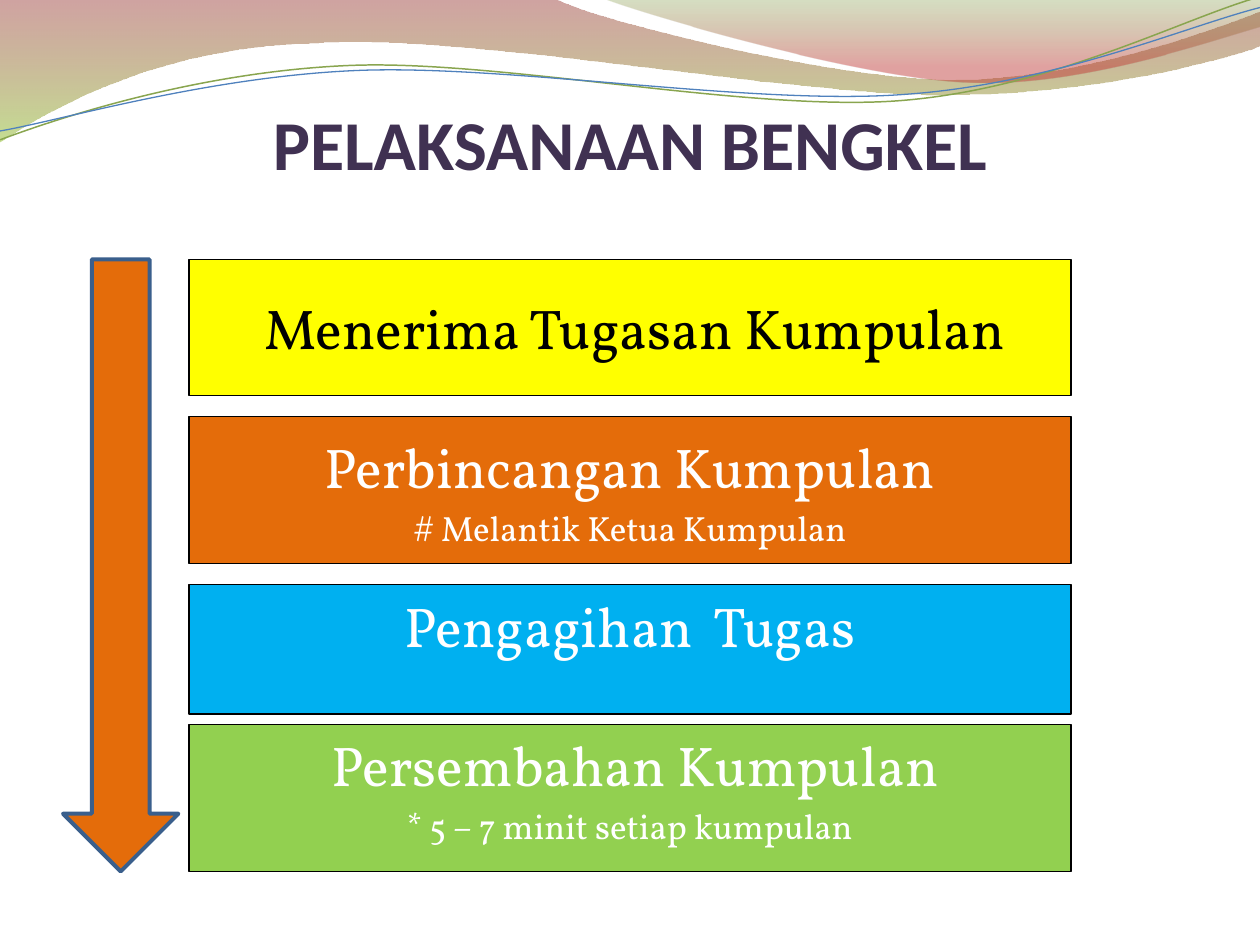
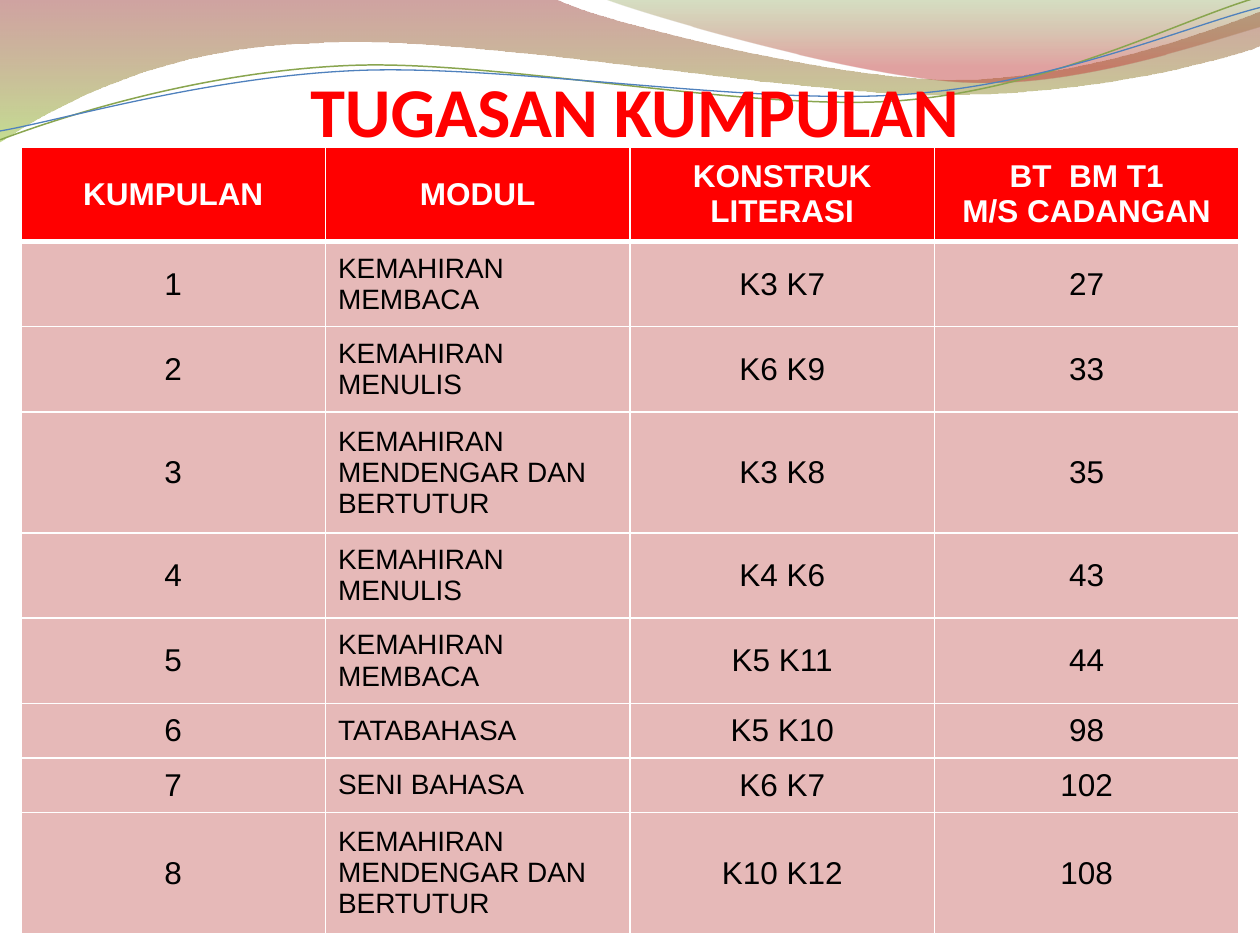
"""Build two workshop slides: the steps of the session and the group tasks."""
from math import cos, radians, sin
from lxml.etree import SubElement
from pptx import Presentation
from pptx.dml.color import RGBColor
from pptx.enum.shapes import MSO_SHAPE
from pptx.enum.text import MSO_ANCHOR, PP_ALIGN
from pptx.oxml.ns import qn
from pptx.util import Inches, Pt

WHITE, BLACK, RED, PINK = "FFFFFF", "000000", "FF0000", "E6B9B8"
ORANGE, PLUM = "E46C0A", "403152"
TOP, MID = MSO_ANCHOR.TOP, MSO_ANCHOR.MIDDLE
LEFT, CENTER = PP_ALIGN.LEFT, PP_ALIGN.CENTER

deck = Presentation()
deck.slide_width, deck.slide_height = Inches(10), Inches(7.5)
unit = deck.slide_width / 120
tenth = deck.slide_width / 10


def paint(fill, color):
    fill.solid()
    fill.fore_color.rgb = RGBColor.from_string(color)


def write(frame, text, face="Arial", size=18, small=None, color=BLACK,
          bold=False, align=CENTER, gap=0, nudge=0):
    frame.word_wrap = True
    for n, line in enumerate(text.split("\n")):
        para = frame.add_paragraph() if n else frame.paragraphs[0]
        points = small if n and small else size
        para.alignment = align
        if gap:
            para.space_before = Pt(points * gap)
        if nudge and not n:
            para._p.get_or_add_pPr().set("marL", str(round(nudge * unit)))
        run = para.add_run()
        run.text = line
        run.font.name, run.font.size, run.font.bold = face, Pt(points), bold
        paint(run.font.fill, color)


waves = [
    ([(0, 0), (4.4, -0.01), (4.76, 0.17, 6.64, 0.63, 7.58, 0.63),
      (8.53, 0.63, 9.58, 0.26, 10, 0.09), (10.01, 0.36),
      (9.83, 0.44, 8.7, 0.76, 7.46, 0.75), (6.22, 0.75, 3.82, 0.28, 2.57, 0.34),
      (1.29, 0.36, 0.46, 0.83, -0.01, 1.13), (0, 0)],
     [(0, "973330", 45), (1, "95C238", 55)], None, 0, (0, 0)),
    ([(4.79, -0.01), (5.09, 0.11, 6.82, 0.62, 7.69, 0.65),
      (8.56, 0.69, 9.61, 0.32, 10, 0.21), (10, 0), (4.79, -0.01)],
     [(0, "769537", 30), (0.8, "BE3330", 45)], None, 0, (0, 0)),
    ([(0, 1.11), (0.48, 0.93, 1.58, 0.57, 2.77, 0.52),
      (3.95, 0.47, 5.93, 0.89, 7.13, 0.8), (8.33, 0.71, 9.38, 0.15, 9.98, -0.02)],
     None, ("89A54F", 0.85), 2.7, (4.99, 0.58)),
    ([(0, 1.04), (0.47, 0.96, 1.64, 0.61, 2.83, 0.56),
      (4.03, 0.51, 5.97, 0.84, 7.17, 0.75), (8.36, 0.67, 9.41, 0.21, 10, 0.06)],
     None, ("4F81BD", 0.75), 2.7, (5, 0.59)),
]
layout = deck.slide_layouts[6]
steps, tasks = [deck.slides.add_slide(layout) for _ in range(2)]
for track, stops, pen, tilt, (px, py) in waves:
    co, si = cos(radians(tilt)), sin(radians(tilt))
    legs = [[((px + (x - px) * co - (y - py) * si) * tenth,
              (py + (x - px) * si + (y - py) * co) * tenth)
             for x, y in zip(move[::2], move[1::2])] for move in track]
    pencil = steps.shapes.build_freeform(*legs[0][0])
    pencil.add_line_segments([leg[-1] for leg in legs[1:]], close=bool(stops))
    wave = pencil.convert_to_shape()
    marks = list(wave._element.iter(qn("a:lnTo")))
    for mark, leg in zip(marks, legs[1:]):
        if len(leg) == 3:
            mark.remove(mark[0])
            mark.tag = qn("a:cubicBezTo")
            for x, y in leg:
                SubElement(mark, qn("a:pt"), x=str(round(x - wave.left)), y=str(round(y - wave.top)))
    wave.rotation = -tilt
    wave.shadow.inherit = False
    if stops:
        wave.line.fill.background()
        wave.fill.gradient()
        wave.fill.gradient_angle = 270
        for stop, (place, color, alpha) in zip(wave.fill.gradient_stops, stops):
            stop.position = place
            stop.color.rgb = RGBColor.from_string(color)
            tint = stop._gs.find(qn("a:srgbClr"))
            SubElement(tint, qn("a:alpha"), val=str(alpha * 1000))
    else:
        wave.fill.background()
        paint(wave.line.fill, pen[0])
        wave.line.width = Pt(pen[1])
    layout.shapes._spTree.append(wave._element)

lines = {1: 5.2, 2: 8.12, 3: 11.53}
groups = [
    ("KEMAHIRAN MEMBACA", "K3 K7", "27", 2),
    ("KEMAHIRAN MENULIS", "K6 K9", "33", 2),
    ("KEMAHIRAN MENDENGAR DAN BERTUTUR", "K3 K8", "35", 3),
    ("KEMAHIRAN MENULIS", "K4 K6", "43", 2),
    ("KEMAHIRAN MEMBACA", "K5 K11", "44", 2),
    ("TATABAHASA", "K5 K10", "98", 1),
    ("SENI BAHASA", "K6 K7", "102", 1),
    ("KEMAHIRAN MENDENGAR DAN BERTUTUR", "K10 K12", "108", 3),
]
rows = [("KUMPULAN", "MODUL", "KONSTRUK LITERASI", "BT  BM T1\nM/S CADANGAN")]
rows += [(str(n), *group[:3]) for n, group in enumerate(groups, 1)]
highs = [9] + [lines[group[3]] for group in groups]
table = tasks.shapes.add_table(len(rows), 4, *(round(v * unit) for v in (2, 14, 116, sum(highs)))).table
for col in table.columns:
    col.width = round(29 * unit)
for r, (row, high) in enumerate(zip(rows, highs)):
    table.rows[r].height = round(high * unit)
    for c, text in enumerate(row):
        cell = table.cell(r, c)
        cell.vertical_anchor = MID
        for side in "LRTB":
            thick = 3 if (r, side) in ((0, "B"), (1, "T")) else 1
            edge = SubElement(cell._tc.get_or_add_tcPr(), qn("a:ln" + side), w=str(Pt(thick)))
            SubElement(SubElement(edge, qn("a:solidFill")), qn("a:srgbClr"), val=WHITE)
        paint(cell.fill, PINK if r else RED)
        item = r > 0 and c == 1
        write(cell.text_frame, text, size=16 if item else 18, bold=r == 0,
              color=BLACK if r else WHITE, align=LEFT if item else CENTER)

titles = [
    (steps, "PELAKSANAAN BENGKEL", PLUM, (9, 9, 102, 11)),
    (tasks, "TUGASAN KUMPULAN", RED, (12.95, 5.85, 95, 11.2)),
]
for slide, text, color, spot in titles:
    box = slide.shapes.add_textbox(*(round(v * unit) for v in spot))
    write(box.text_frame, text, face="Calibri", size=40, color=color, bold=True)

boxes = [
    ("Menerima Tugasan Kumpulan", "FFFF00", BLACK, 24.7, 13, MID, 1),
    ("Perbincangan Kumpulan\n# Melantik Ketua Kumpulan", ORANGE, WHITE, 39.7, 14, MID, 0),
    ("Pengagihan  Tugas", "00B0F0", WHITE, 55.7, 12.3, TOP, 0),
    ("Persembahan Kumpulan\n* 5 – 7 minit setiap kumpulan", "92D050", WHITE, 69, 14, TOP, 1),
]
for text, fill, color, top, high, anchor, nudge in boxes:
    box = steps.shapes.add_shape(MSO_SHAPE.RECTANGLE, *(round(v * unit) for v in (18, top, 84, high)))
    box.shadow.inherit = False
    paint(box.fill, fill)
    paint(box.line.fill, BLACK)
    box.line.width = Pt(0.75)
    box.text_frame.vertical_anchor = anchor
    write(box.text_frame, text, face="Vollkorn", size=32, small=20, color=color, gap=0.2, nudge=nudge)

arrow = steps.shapes.add_shape(MSO_SHAPE.DOWN_ARROW, *(round(v * unit) for v in (6, 24.7, 11, 58.3)))
arrow.shadow.inherit = False
paint(arrow.fill, ORANGE)
paint(arrow.line.fill, "3A5F8C")
arrow.line.width = Pt(2.25)

deck.save("out.pptx")
